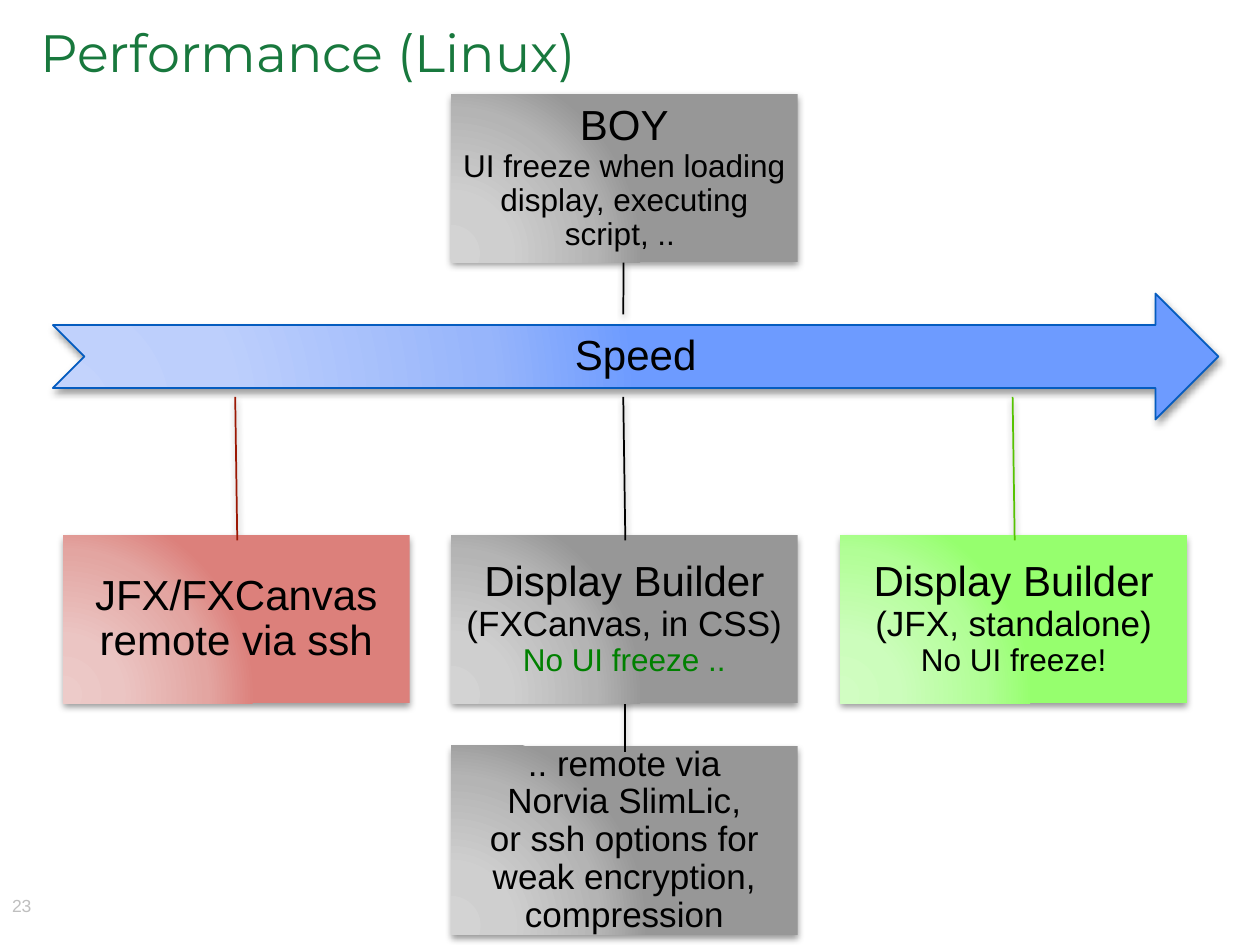
from pptx import Presentation
from pptx.dml.color import RGBColor
from pptx.enum.shapes import MSO_SHAPE as Shape
from pptx.enum.text import MSO_ANCHOR as Anchor, PP_ALIGN as Align
from pptx.oxml import parse_xml
from pptx.oxml.ns import nsdecls
from pptx.util import Inches, Pt

BLACK = RGBColor(0x00, 0x00, 0x00)
GREEN = RGBColor(0x00, 0x80, 0x00)
TITLE_GREEN = RGBColor(0x18, 0x78, 0x3D)
PAGE_GRAY = RGBColor(0xBF, 0xBF, 0xBF)
BLUE_LINE = RGBColor(0x05, 0x5C, 0xBF)
LIME_LINE = RGBColor(0x56, 0xC3, 0x02)
RED_LINE = RGBColor(0x9B, 0x18, 0x04)

GRAY_STOPS = ("D3D3D3", "CFCFCF", "B4B4B4", "979797")
BLUE_STOPS = ("C3D3FC", "BDCFFC", "97B5FB", "6D9BFF")
LIME_STOPS = ("D1FDC2", "CCFDBC", "B1FE96", "96FF6E")
RED_STOPS = ("EDCBC9", "EBC5C3", "E3A5A1", "DC807B")
STOP_POSITIONS = (0, 30, 75, 100)

COLUMNS = (0.5, 3.58, 6.67)
BOX_WIDTH = 2.75
BOX_HEIGHT = 1.33
ROW_TOP = 4.25
UP_TO_ARROW = (0.03, 0.503, -0.827, 0.497)

CALLOUTS = [
    {"column": 1, "top": 5.92, "height": 1.5, "pointer": (0.03, 0.503, -0.272, 0.503),
     "stops": GRAY_STOPS, "line": BLACK,
     "text": [[(".. remote via\nNorvia SlimLic,", 20, BLACK)],
              [("or ssh options for weak encryption, compression", 20, BLACK)]]},
    {"column": 1, "top": 0.75, "height": BOX_HEIGHT, "pointer": (1.003, 0.498, 1.313, 0.497),
     "stops": GRAY_STOPS, "line": BLACK,
     "text": [[("BOY", 24, BLACK)],
              [("UI freeze when loading display, executing script, .. ", 18, BLACK)]]},
    {"column": 2, "top": ROW_TOP, "height": BOX_HEIGHT, "pointer": UP_TO_ARROW,
     "stops": LIME_STOPS, "line": LIME_LINE,
     "text": [[("Display Builder ", 24, BLACK), ("(JFX, standalone)", 20, BLACK)],
              [("No UI freeze!", 18, BLACK)]]},
    {"column": 1, "top": ROW_TOP, "height": BOX_HEIGHT, "pointer": UP_TO_ARROW,
     "stops": GRAY_STOPS, "line": BLACK,
     "text": [[("Display Builder ", 24, BLACK), ("(FXCanvas, in CSS)", 20, BLACK)],
              [("No UI freeze ..", 18, GREEN)]]},
    {"column": 0, "top": ROW_TOP, "height": BOX_HEIGHT, "pointer": UP_TO_ARROW,
     "stops": RED_STOPS, "line": RED_LINE,
     "text": [[("JFX/FXCanvas remote via ssh", 24, BLACK)]]},
]


def set_gradient(shape, colors):
    stops = "".join(
        f'<a:gs pos="{position * 1000}"><a:srgbClr val="{color}"/></a:gs>'
        for position, color in zip(STOP_POSITIONS, colors))
    gradient = parse_xml(
        f'<a:gradFill {nsdecls("a")} rotWithShape="1"><a:gsLst>{stops}</a:gsLst>'
        '<a:path path="circle"><a:fillToRect l="5000" t="100000" r="120000" b="10000"/>'
        '</a:path></a:gradFill>')
    shape.fill.solid()
    properties = shape._element.spPr
    properties.replace(properties.find("{*}solidFill"), gradient)


def set_shadow(shape):
    shape.shadow.inherit = False
    shape._element.spPr.find("{*}effectLst").append(parse_xml(
        f'<a:outerShdw {nsdecls("a")} blurRad="{Pt(4)}" dist="{Pt(2)}" dir="5400000" '
        'rotWithShape="0"><a:srgbClr val="000000"><a:alpha val="40000"/></a:srgbClr>'
        '</a:outerShdw>'))


def write(shape, paragraphs, font="Arial", align=Align.CENTER, spacing=0.9,
          anchor=Anchor.MIDDLE, margins=(0.05, 0.05), wrap=True):
    frame = shape.text_frame
    frame.word_wrap = wrap
    frame.vertical_anchor = anchor
    frame.margin_left = frame.margin_right = Inches(margins[0])
    frame.margin_top = frame.margin_bottom = Inches(margins[1])
    for index, spans in enumerate(paragraphs):
        para = frame.paragraphs[0] if index == 0 else frame.add_paragraph()
        para.alignment = align
        para.line_spacing = spacing
        para.font.name = font
        para.font.size = Pt(spans[0][1])
        para.font.color.rgb = spans[0][2]
        for text, size, color in spans:
            for number, line in enumerate(text.split("\n")):
                if number:
                    para.add_line_break()
                span = para.add_run()
                span.text = line
                span.font.name = font
                span.font.size = Pt(size)
                span.font.color.rgb = color


def add_block(page, kind, place, stops, line, text, adjustments=()):
    shape = page.shapes.add_shape(kind, *map(Inches, place))
    for index, value in enumerate(adjustments):
        shape.adjustments[index] = value
    set_gradient(shape, stops)
    shape.line.color.rgb = line
    shape.line.width = Pt(1)
    set_shadow(shape)
    write(shape, text)


def add_label(page, place, text, **style):
    box = page.shapes.add_textbox(*map(Inches, place))
    write(box, [[text]], anchor=Anchor.TOP, **style)


def main():
    deck = Presentation()
    deck.slide_width, deck.slide_height = Inches(10), Inches(7.5)
    page = deck.slides.add_slide(deck.slide_layouts[6])
    add_label(page, (0.02, 7.12, 0.23, 0.17), ("23", 10, PAGE_GRAY),
              align=Align.RIGHT, margins=(0, 0), wrap=False)
    add_label(page, (0.22, 0.19, 9.44, 0.54), ("Performance (Linux)", 30, TITLE_GREEN),
              font="Montserrat", align=Align.LEFT, spacing=0.85, margins=(0.1, 0.05))
    add_block(page, Shape.NOTCHED_RIGHT_ARROW, (0.42, 2.33, 9.25, 1), BLUE_STOPS,
              BLUE_LINE, [[("Speed", 24, BLACK)]])
    for callout in CALLOUTS:
        place = (COLUMNS[callout["column"]], callout["top"], BOX_WIDTH, callout["height"])
        add_block(page, Shape.LINE_CALLOUT_1_NO_BORDER, place, callout["stops"],
                  callout["line"], callout["text"], callout["pointer"])
    deck.save("out.pptx")


if __name__ == "__main__":
    main()
